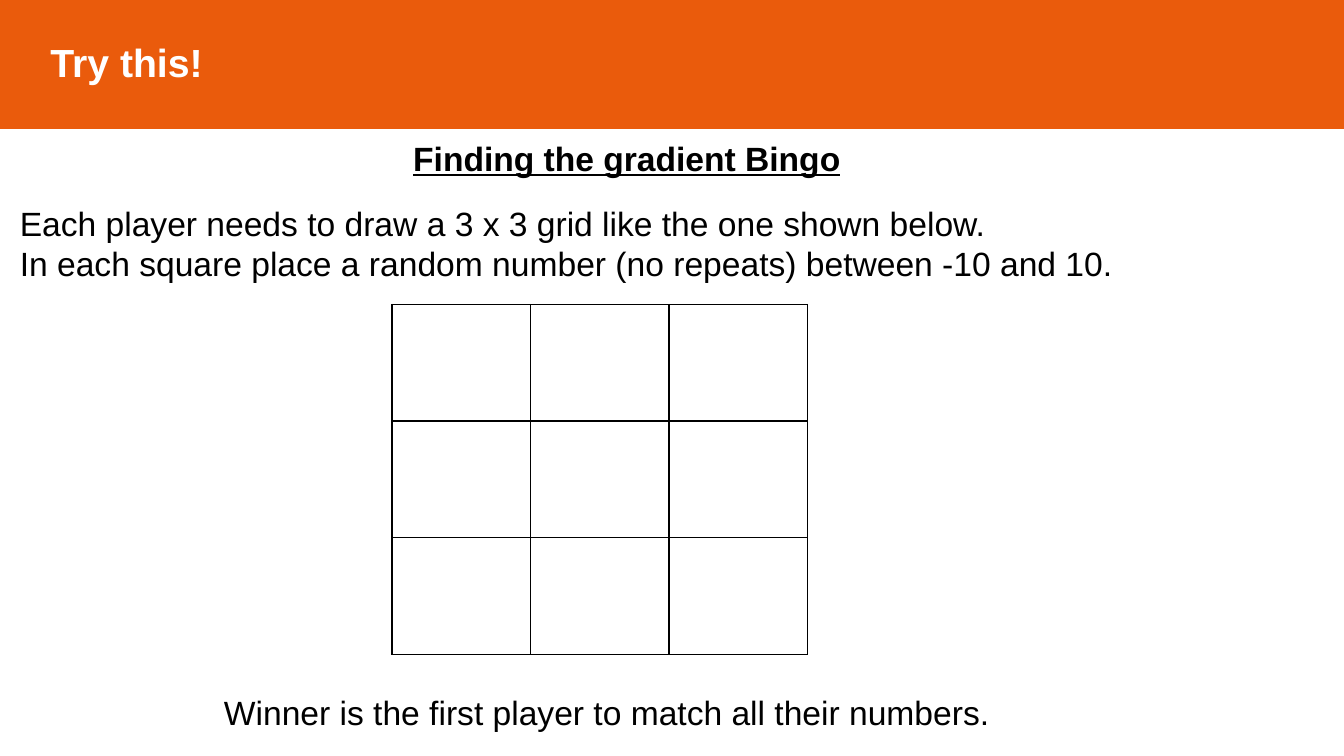
from dataclasses import dataclass

from lxml import etree
from pptx import Presentation
from pptx.dml.color import RGBColor
from pptx.enum import text
from pptx.oxml import ns
from pptx.util import Cm, Pt


@dataclass(frozen=True)
class Theme:
    orange: RGBColor = RGBColor(0xEA, 0x5B, 0x0C)
    white: RGBColor = RGBColor(0xFF, 0xFF, 0xFF)
    black: RGBColor = RGBColor(0, 0, 0)
    font: str = "Arial"
    title_size: Pt = Pt(28)
    body_size: Pt = Pt(24)
    rule: Pt = Pt(1)


theme = Theme()


def add_text(page, left, top, width, height, lines, align, heading=False):
    box = page.shapes.add_textbox(Cm(left), Cm(top), Cm(width), Cm(height))
    frame = box.text_frame
    frame.word_wrap = True
    frame.auto_size = text.MSO_AUTO_SIZE.SHAPE_TO_FIT_TEXT
    frame.text = "\n".join(lines)
    for para in frame.paragraphs:
        para.alignment = align
        para.font.name = theme.font
        para.font.size = theme.body_size
        para.font.color.rgb = theme.black
        if heading:
            para.font.bold = True
            para.font.underline = True


def add_borders(cell):
    properties = cell._tc.get_or_add_tcPr()
    for side in ("lnL", "lnR", "lnT", "lnB"):
        border = etree.SubElement(properties, ns.qn(f"a:{side}"), w=str(theme.rule))
        fill = etree.SubElement(border, ns.qn("a:solidFill"))
        etree.SubElement(fill, ns.qn("a:srgbClr"), val=str(theme.black))


deck = Presentation()
deck.slide_width, deck.slide_height = Cm(33.87), Cm(19.05)
page = deck.slides.add_slide(deck.slide_layouts.get_by_name("Title Only"))

# Title banner
title = page.shapes.title
title.left, title.top, title.width, title.height = Cm(0), Cm(-0.13), Cm(33.87), Cm(3.36)
title.fill.solid()
title.fill.fore_color.rgb = theme.orange
title.line.color.rgb = theme.orange
title.line.width = theme.rule
frame = title.text_frame
frame.text = "Try this!"
frame.auto_size = text.MSO_AUTO_SIZE.NONE
frame.vertical_anchor = text.MSO_ANCHOR.MIDDLE
frame.margin_left = Cm(1.27)
para = frame.paragraphs[0]
para.alignment = text.PP_ALIGN.LEFT
para.font.name = theme.font
para.font.size = theme.title_size
para.font.bold = True
para.font.color.rgb = theme.white

# Instructions
add_text(page, 3.1, 3.35, 25.4, 1.3, ["Finding the gradient Bingo"],
         text.PP_ALIGN.CENTER, heading=True)
add_text(page, 0.25, 4.98, 33.6, 2.31, [
    "Each player needs to draw a 3 x 3 grid like the one shown below.",
    "In each square place a random number (no repeats) between -10 and 10.",
], text.PP_ALIGN.LEFT)

# Bingo grid
grid = page.shapes.add_table(3, 3, Cm(9.88), Cm(7.67), Cm(10.47), Cm(8.82)).table
grid.first_row = False
grid.horz_banding = False
for cell in grid.iter_cells():
    add_borders(cell)
    cell.fill.solid()
    cell.fill.fore_color.rgb = theme.white

add_text(page, 2.59, 17.3, 25.4, 1.3,
         ["Winner is the first player to match all their numbers."],
         text.PP_ALIGN.CENTER)

deck.save("out.pptx")
